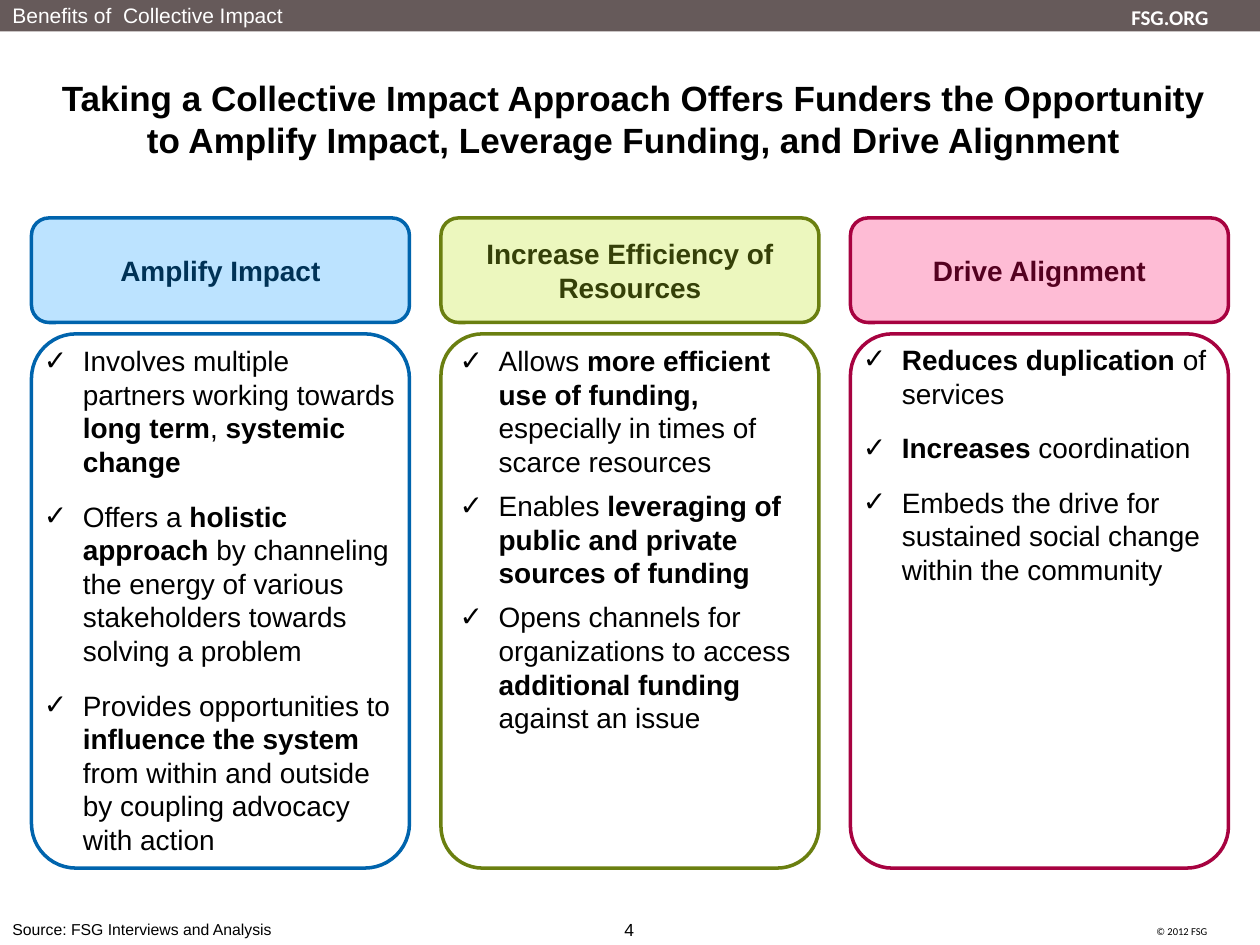
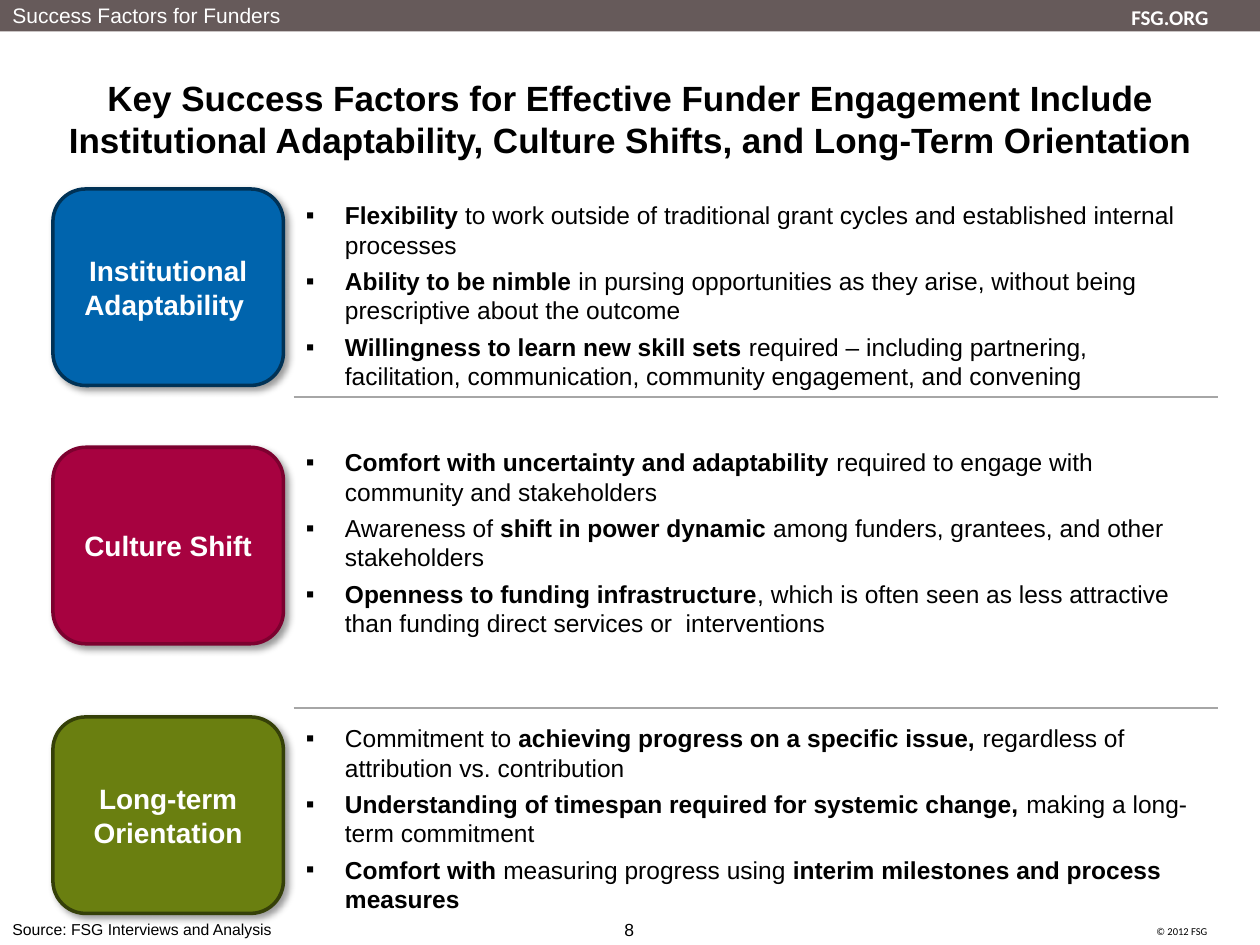
from lxml.etree import SubElement as Sub
from pptx import Presentation
from pptx.dml.color import RGBColor as RGB
from pptx.enum.shapes import MSO_CONNECTOR as Line, MSO_SHAPE as Shape
from pptx.enum.text import MSO_ANCHOR as Anchor, MSO_AUTO_SIZE as Fit, PP_ALIGN as Align
from pptx.oxml.ns import qn
from pptx.util import Inches, Pt

HUES = {
    "black": "000000", "white": "FFFFFF", "band": "665A5A", "rule": "A6A6A6",
    "blue": "0064AD", "sky": "BCE3FF", "navy": "003256",
    "green": "6A7F10", "lime": "ECF7BE", "moss": "354008",
    "red": "A70240", "pink": "FEBCD5", "wine": "540120", "ruby": "7C012F",
}

BRAND = "FSG.ORG"
RIGHTS = "© 2012 FSG"
SOURCE = "Source: FSG Interviews and Analysis"

GAINS = {
    "topic": "Benefits of  Collective Impact",
    "title": "Taking a Collective Impact Approach Offers Funders the Opportunity "
             "to Amplify Impact, Leverage Funding, and Drive Alignment",
    "page": "4",
    "width": 9.4,
}
COLUMNS = [
    {"head": "Amplify Impact", "fill": "sky", "edge": "blue", "ink": "navy",
     "round": 0.118, "inset": 0, "top": 2.68, "after": 6,
     "points": [
         "Involves multiple partners working towards **long term**, **systemic change**",
         "Offers a **holistic approach **by channeling the energy of various "
         "stakeholders towards solving a problem",
         "Provides opportunities to **influence the system **from within and "
         "outside by coupling advocacy with action"]},
    {"head": "Increase Efficiency of Resources", "fill": "lime", "edge": "green",
     "ink": "moss", "round": 0.11, "inset": 0.05, "top": 2.68, "after": 0,
     "points": [
         "Allows **more efficient use of funding, **especially in times of scarce resources",
         "Enables **leveraging of public and private sources of funding**",
         "Opens channels for organizations to access **additional funding **"
         "against an issue"]},
    {"head": "Drive Alignment", "fill": "pink", "edge": "red", "ink": "wine",
     "round": 0.11, "inset": 0, "top": 2.67, "after": 6,
     "points": [
         "**Reduces duplication **of services",
         "**Increases** coordination",
         "Embeds the drive for sustained social change within the community"]},
]

FACTORS = {
    "topic": "Success Factors for Funders",
    "title": "Key Success Factors for Effective Funder Engagement Include "
             "Institutional Adaptability, Culture Shifts, and Long-Term Orientation",
    "page": "8",
    "width": 9.67,
}
ROWS = [
    {"head": "Institutional Adaptability ", "fill": "blue", "edge": "navy",
     "top": 1.5, "text": 1.54,
     "points": [
         "**Flexibility** to work outside of traditional grant cycles and "
         "established internal processes",
         "**Ability to be nimble** in pursing opportunities as they arise, without "
         "being prescriptive about the outcome",
         "**Willingness to learn new skill sets **required – including partnering, "
         "facilitation, communication, community engagement, and convening"]},
    {"head": "Culture Shift", "fill": "red", "edge": "ruby",
     "top": 3.55, "text": 3.5,
     "points": [
         "**Comfort with uncertainty and adaptability **required to engage with "
         "community and stakeholders",
         "Awareness of **shift in power dynamic **among funders, grantees, and "
         "other stakeholders",
         "**Openness to funding infrastructure**, which is often seen as less "
         "attractive than funding direct services or  interventions"]},
    {"head": "Long-term Orientation", "fill": "green", "edge": "moss",
     "top": 5.69, "text": 5.69,
     "points": [
         "Commitment to **achieving progress on a specific issue,** regardless of "
         "attribution vs. contribution",
         "**Understanding of timespan required for systemic change, **making a "
         "long-term commitment",
         "**Comfort with **measuring progress using **interim milestones and "
         "process measures**"]},
]
RULES = [3.15, 5.62]


def hue(name):
    return RGB.from_string(HUES[name])


def style(par, size, ink="black", bold=False, align=Align.LEFT, face="Arial"):
    par.alignment = align
    font = par.font
    font.name, font.size, font.bold = face, Pt(size), bold
    font.color.rgb = hue(ink)


def label(slide, text, at, size, anchor=Anchor.TOP, wrap=True, **look):
    frame = slide.shapes.add_textbox(*map(Inches, at)).text_frame
    frame.word_wrap = wrap
    frame.vertical_anchor = anchor
    par = frame.paragraphs[0]
    par.text = text
    style(par, size, **look)


def panel(slide, at, fill, edge=None, kind=Shape.ROUNDED_RECTANGLE, bend=None):
    box = slide.shapes.add_shape(kind, *map(Inches, at))
    box.shadow.inherit = False
    box.fill.solid()
    box.fill.fore_color.rgb = hue(fill)
    if edge:
        box.line.color.rgb = hue(edge)
        box.line.width = Pt(2)
    else:
        box.line.fill.background()
    if bend:
        box.adjustments[0] = bend
    return box


def caption(box, text, ink):
    frame = box.text_frame
    frame.word_wrap = True
    frame.vertical_anchor = Anchor.MIDDLE
    par = frame.paragraphs[0]
    par.text = text
    style(par, 16, ink, True, Align.CENTER)


def shade(box):
    effects = box._element.spPr.find(qn("a:effectLst"))
    outer = Sub(effects, qn("a:outerShdw"), blurRad=str(Pt(4)), dist=str(Pt(3)),
                dir=str(45 * 60000), algn="tl", rotWithShape="0")
    tint = Sub(outer, qn("a:srgbClr"), val=HUES["black"])
    Sub(tint, qn("a:alpha"), val="40000")


def bullets(slide, points, at, size, mark, before, after=0):
    frame = slide.shapes.add_textbox(*map(Inches, at)).text_frame
    frame.word_wrap = True
    for n, point in enumerate(points):
        par = frame.add_paragraph() if n else frame.paragraphs[0]
        props = par._p.get_or_add_pPr()
        props.set("marL", str(Inches(0.31)))
        props.set("indent", str(-Inches(0.31)))
        Sub(props, qn("a:buFont"), typeface="Arial")
        Sub(props, qn("a:buChar"), char=mark)
        par.space_before = Pt(before if n else 0)
        par.space_after = Pt(after)
        style(par, size)
        for k, part in enumerate(point.split("**")):
            if part:
                run = par.add_run()
                run.text = part
                run.font.bold = k % 2 == 1


def rule(slide, y):
    line = slide.shapes.add_connector(
        Line.STRAIGHT, Inches(2.33), Inches(y), Inches(9.67), Inches(y))
    line.line.color.rgb = hue("rule")
    line.line.width = Pt(0.75)
    Sub(line._element.spPr, qn("a:effectLst"))


def start(deck, info):
    slide = deck.slides.add_slide(deck.slide_layouts[5])
    panel(slide, (0, 0, 10, 0.25), "band", kind=Shape.RECTANGLE)
    label(slide, RIGHTS, (9.07, 7.29, 0.61, 0.2), 6, Anchor.MIDDLE, False,
          align=Align.RIGHT, face="Calibri")
    label(slide, info["page"], (4.76, 7.24, 0.47, 0.27), 10, Anchor.MIDDLE,
          align=Align.CENTER)
    label(slide, BRAND, (8.87, -0.01, 0.82, 0.3), 12, wrap=False, ink="white",
          bold=True, align=Align.RIGHT, face="Calibri")
    label(slide, info["topic"], (0, 0, 4.58, 0.24), 12, Anchor.MIDDLE, ink="white")
    label(slide, SOURCE, (0, 7.25, 10.05, 0.25), 9)

    title = slide.shapes.title
    left = 0.33 if info is GAINS else 0.17
    title.left, title.top = Inches(left), Inches(0.58)
    title.width, title.height = Inches(info["width"]), Inches(0.72)
    frame = title.text_frame
    frame.auto_size = Fit.NONE
    frame.word_wrap = True
    frame.vertical_anchor = Anchor.MIDDLE
    frame.margin_top = frame.margin_bottom = 0
    par = frame.paragraphs[0]
    par.text = info["title"]
    style(par, 20, bold=True, align=Align.CENTER)
    return slide


def gains(deck):
    slide = start(deck, GAINS)
    for n, col in enumerate(COLUMNS):
        x = 0.25 + n * 3.25
        head = panel(slide, (x, 1.73, 3, 0.83), col["fill"], col["edge"])
        caption(head, col["head"], col["ink"])
        panel(slide, (x, 2.65, 3, 4.24), "white", col["edge"], bend=col["round"])
        inset = col["inset"]
        bullets(slide, col["points"], (x + inset, col["top"], 3 - 2 * inset, 4.2),
                16, "✓", 6, col["after"])


def factors(deck):
    slide = start(deck, FACTORS)
    for row in ROWS:
        box = panel(slide, (0.42, row["top"], 1.83, 1.56), row["fill"], row["edge"])
        shade(box)
        caption(box, row["head"], "white")
        bullets(slide, row["points"], (2.33, row["text"], 7.33, 1.63), 14, "▪", 4)
    for y in RULES:
        rule(slide, y)


def main():
    deck = Presentation()
    deck.slide_width, deck.slide_height = Inches(10), Inches(7.5)
    gains(deck)
    factors(deck)
    deck.save("out.pptx")


if __name__ == "__main__":
    main()
